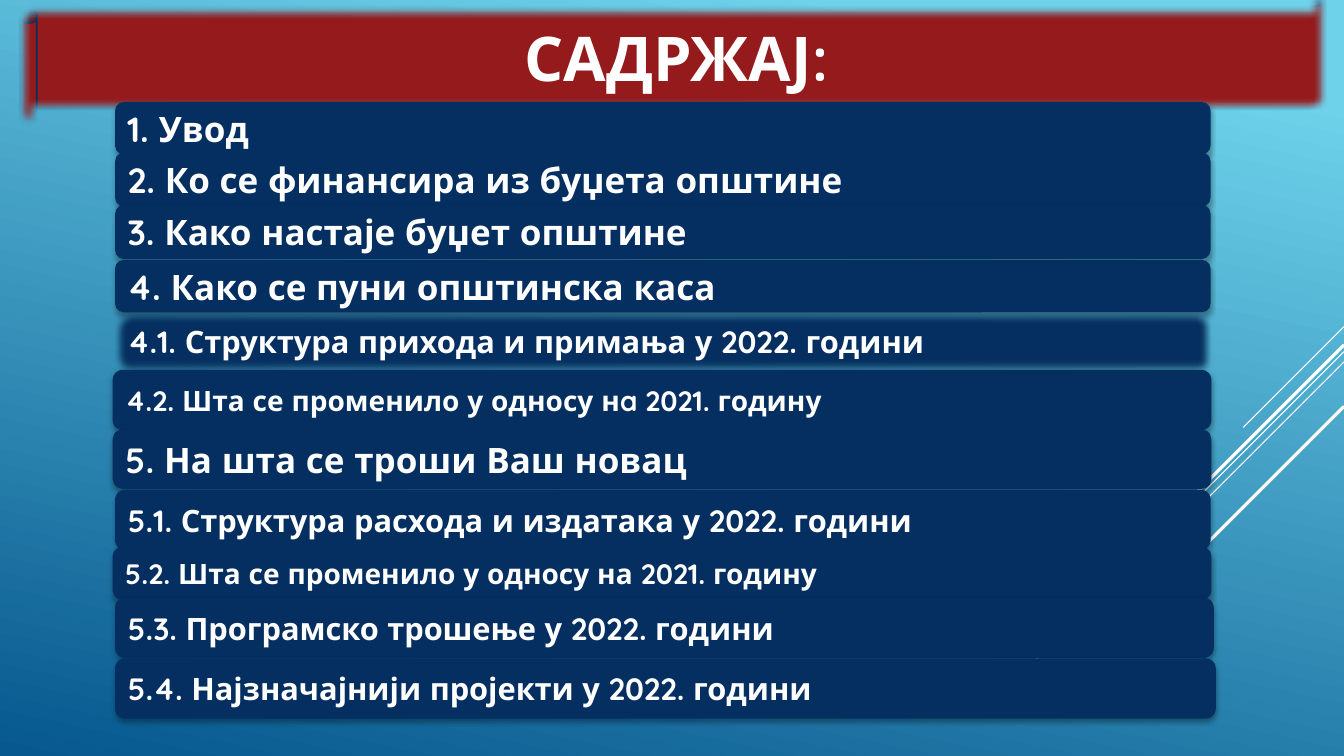
"""Build the contents slide of a municipal budget guide."""
from dataclasses import dataclass
from typing import Any

from lxml import etree
from pptx import Presentation
from pptx import util as u
from pptx.dml.color import RGBColor
from pptx.enum import shapes, text
from pptx.oxml import ns

WHITE = RGBColor(0xFF, 0xFF, 0xFF)
NAVY = RGBColor(0x05, 0x2F, 0x61)
RED = RGBColor(0x94, 0x1A, 0x1B)
SKY = RGBColor(0x6E, 0xD2, 0xEB)
DEEP_BLUE = RGBColor(0x06, 0x58, 0x8E)

SLIDE_WIDTH, SLIDE_HEIGHT = 33.87, 19.05
SOFT_RADIUS = u.Pt(5)
FONT = {"name": "Quicksand", "bold": True}
FRAME = {"word_wrap": True, "vertical_anchor": text.MSO_ANCHOR.MIDDLE}


@dataclass(frozen=True)
class Ray:
    """A 45-degree line running down and left from the right edge."""
    top: float
    run: float
    weight: float = 0.75


@dataclass(frozen=True)
class Panel:
    """A filled box with one line of text."""
    words: str
    top: float
    height: float
    size: float = 25
    left: float = 2.9
    width: float = 27.61
    fill: RGBColor = NAVY
    kind: Any = shapes.MSO_SHAPE.ROUNDED_RECTANGLE
    align: Any = text.PP_ALIGN.LEFT
    outline: float = 0
    shadow: bool = True
    soft: bool = False


RAYS = [
    Ray(8.23, 2.54),
    Ray(8.86, 8.28),
    Ray(9.12, 5.27),
    Ray(8.69, 4.85, 2.25),
    Ray(10.24, 3.53, 2.25),
]

TITLE = Panel("САДРЖАЈ:", -0.28, 3.45, 44, 0.48, 32.92, RED,
              shapes.MSO_SHAPE.HORIZONTAL_SCROLL, text.PP_ALIGN.CENTER,
              outline=1.25, shadow=False, soft=True)

CONTENTS = [
    Panel("1. Увод", 2.57, 1.32),
    Panel("2. Ко се финансира из буџета општине", 3.84, 1.37),
    Panel("3. Како настаје буџет општине", 5.16, 1.37),
    Panel("4. Како се пуни општинска каса", 6.55, 1.32),
    Panel("4.1. Структура прихода и примања у 2022. години", 7.85, 1.52, 22, soft=True),
    Panel("4.2. Шта се променило у односу нa 2021. годину", 9.32, 1.52, 20, 2.84, 27.69),
    Panel("5. На шта се троши Ваш новац", 10.82, 1.5, 25, 2.84, 27.69),
    Panel("5.1. Структура расхода и издатака у 2022. години", 12.34, 1.52, 22),
    Panel("5.2. Шта се променило у односу на 2021. годину", 13.79, 1.32, 20, 2.84, 27.69),
    Panel("5.3. Програмско трошење у 2022. години", 15.06, 1.52, 22, width=27.69),
    Panel("5.4. Најзначајнији пројекти у 2022. години", 16.59, 1.52, 22, width=27.74),
]


def apply(target: Any, values: dict[str, Any]) -> None:
    """Set each named attribute on the target."""
    for name, value in values.items():
        setattr(target, name, value)


def add_child(parent: Any, tag: str, **values: Any) -> Any:
    """Append a drawing element with the given attributes."""
    return etree.SubElement(parent, ns.qn(tag),
                            {name: str(value) for name, value in values.items()})


def paint_background(page: Any) -> None:
    """Fill the page with the slanted blue gradient."""
    fill = page.background.fill
    fill.gradient()
    fill.gradient_angle = 258
    for stop, color, position in zip(fill.gradient_stops, (SKY, DEEP_BLUE), (0.1, 1)):
        stop.color.rgb = color
        stop.position = position


def draw_ray(page: Any, ray: Ray) -> None:
    """Draw one white diagonal line."""
    line = page.shapes.add_connector(
        shapes.MSO_CONNECTOR.STRAIGHT, u.Cm(SLIDE_WIDTH), u.Cm(ray.top),
        u.Cm(SLIDE_WIDTH - ray.run), u.Cm(ray.top + ray.run))
    line.line.color.rgb = WHITE
    line.line.width = u.Pt(ray.weight)
    add_child(line._element.spPr, "a:effectLst")


def add_effects(box: Any, panel: Panel) -> None:
    """Give the box its drop shadow and soft edge."""
    box.shadow.inherit = False
    effects = box._element.spPr.find(ns.qn("a:effectLst"))
    if panel.shadow:
        shadow = add_child(effects, "a:outerShdw", blurRad=u.Pt(3.5), dist=u.Pt(2.2),
                           dir=5400000, algn="ctr", rotWithShape=0)
        color = add_child(shadow, "a:srgbClr", val="000000")
        add_child(color, "a:alpha", val=32000)
    if panel.soft:
        add_child(effects, "a:softEdge", rad=SOFT_RADIUS)


def draw_panel(page: Any, panel: Panel) -> None:
    """Draw one box with its text and effects."""
    box = page.shapes.add_shape(panel.kind, u.Cm(panel.left), u.Cm(panel.top),
                                u.Cm(panel.width), u.Cm(panel.height))
    box.fill.solid()
    box.fill.fore_color.rgb = panel.fill
    if panel.outline:
        box.line.color.rgb = NAVY
        box.line.width = u.Pt(panel.outline)
    else:
        box.line.fill.background()
    add_effects(box, panel)
    apply(box.text_frame, FRAME)
    para = box.text_frame.paragraphs[0]
    para.alignment = panel.align
    span = para.add_run()
    span.text = panel.words
    apply(span.font, FONT | {"size": u.Pt(panel.size)})
    span.font.color.rgb = WHITE


def main() -> None:
    """Create the deck and save it."""
    deck = Presentation()
    apply(deck, {"slide_width": u.Cm(SLIDE_WIDTH), "slide_height": u.Cm(SLIDE_HEIGHT)})
    page = deck.slides.add_slide(deck.slide_layouts[6])
    paint_background(page)
    for ray in RAYS:
        draw_ray(page, ray)
    for panel in [TITLE, *CONTENTS]:
        draw_panel(page, panel)
    deck.save("out.pptx")


if __name__ == "__main__":
    main()
